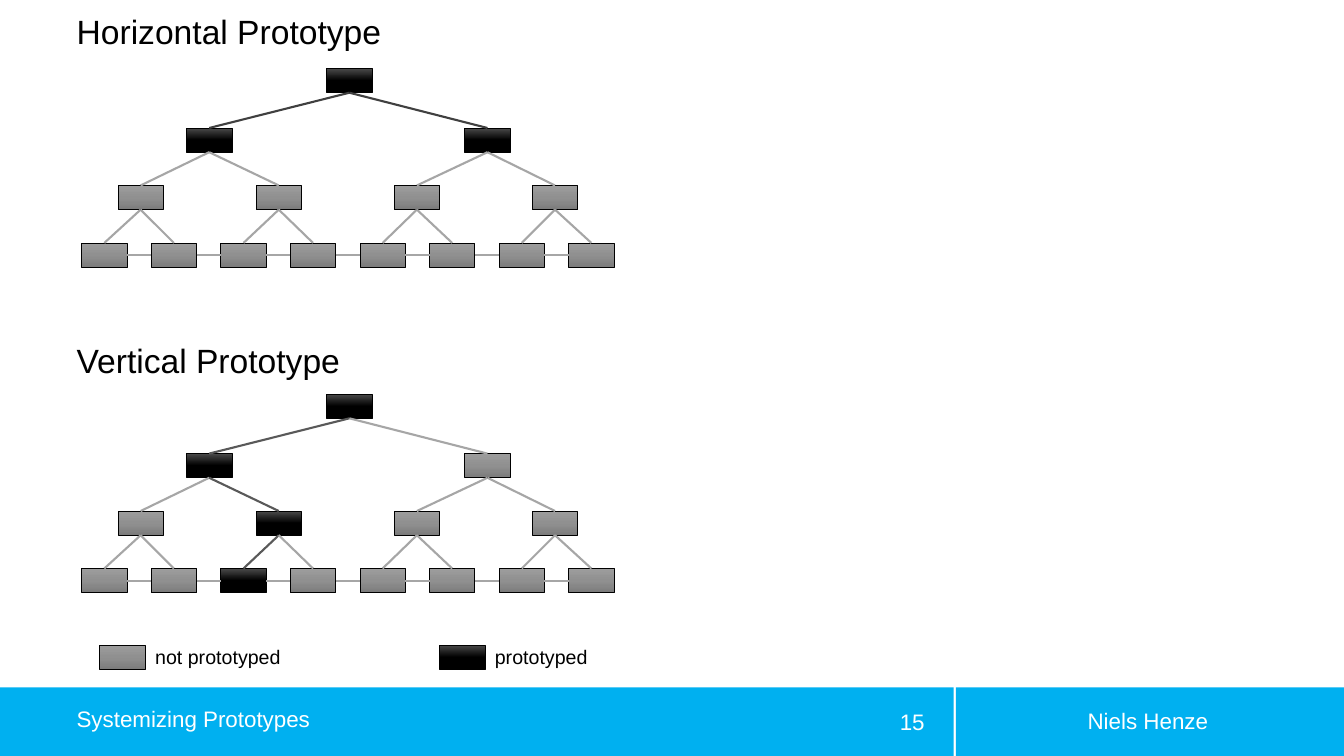
from copy import deepcopy
from dataclasses import dataclass

from pptx import Presentation
from pptx.dml.color import RGBColor
from pptx.enum.shapes import MSO_CONNECTOR, MSO_SHAPE
from pptx.enum.text import MSO_ANCHOR, MSO_AUTO_SIZE, PP_ALIGN
from pptx.oxml.ns import qn
from pptx.oxml.xmlchemy import OxmlElement
from pptx.util import Inches, Pt


@dataclass(frozen=True)
class Theme:
    font: str = "Arial"
    heading: int = 24
    footer: int = 16
    legend: int = 14
    black: str = "000000"
    white: str = "FFFFFF"
    bar: str = "00B0F0"
    link: str = "A6A6A6"
    done: tuple = ("4B4B4B", "000000", "000000")
    todo: tuple = ("9D9D9D", "909090", "7C7C7C")


T = Theme()
rgb = RGBColor.from_string
BOX_W, BOX_H = 0.45, 0.24


def write(sp, text, size, color, align=PP_ALIGN.LEFT, anchor=MSO_ANCHOR.MIDDLE,
          wrap=True, left_inset=0.1):
    tf = sp.text_frame
    tf.text = text
    tf.word_wrap = wrap
    tf.auto_size = MSO_AUTO_SIZE.NONE if wrap else MSO_AUTO_SIZE.SHAPE_TO_FIT_TEXT
    tf.vertical_anchor = anchor
    tf.margin_left = Inches(left_inset)
    p = tf.paragraphs[0]
    p.alignment = align
    font = p.runs[0].font
    font.name, font.size, font.color.rgb = T.font, Pt(size), rgb(color)


def add_box(shapes, x, y, is_done):
    sp = shapes.add_shape(MSO_SHAPE.RECTANGLE, Inches(x), Inches(y),
                          Inches(BOX_W), Inches(BOX_H))
    sp.shadow.inherit = False
    sp.line.color.rgb = rgb(T.black)
    sp.line.width = Pt(0.5)
    # Three-stop gradient running from top to bottom
    sp.fill.gradient()
    sp.fill.gradient_angle = 270
    stops = sp._element.spPr.find(".//" + qn("a:gsLst"))
    stops.insert(1, deepcopy(stops[0]))
    colors = T.done if is_done else T.todo
    for stop, position, color in zip(sp.fill.gradient_stops, (0, 0.5, 1), colors):
        stop.position = position
        stop.color.rgb = rgb(color)
    return sp


prs = Presentation()
prs.slide_width, prs.slide_height = Inches(13.33), Inches(7.5)
s = prs.slides.add_slide(prs.slide_layouts[5])

# Footer bar in two parts
for x, w in ((0, 9.46), (9.48, 3.85)):
    bar = s.shapes.add_shape(MSO_SHAPE.RECTANGLE, Inches(x), Inches(6.82),
                             Inches(w), Inches(0.68))
    bar.shadow.inherit = False
    bar.fill.solid()
    bar.fill.fore_color.rgb = rgb(T.bar)
    bar.line.fill.background()

# Slide title sits in the bar, so it moves in front of it
title = s.shapes.title
bar._element.addnext(title._element)
title.left, title.top = Inches(0.76), Inches(6.95)
title.width, title.height = Inches(6.14), Inches(0.4)
write(title, "Systemizing Prototypes", T.footer, T.white, left_inset=0)
title.text_frame.paragraphs[0].line_spacing = 0.9

# Author and slide number
for text, x, y, w, align in (("Niels Henze", 9.61, 6.95, 3.55, PP_ALIGN.CENTER),
                             ("15", 8.41, 6.96, 0.86, PP_ALIGN.RIGHT)):
    tb = s.shapes.add_textbox(Inches(x), Inches(y), Inches(w), Inches(0.4))
    write(tb, text, T.footer, T.white, align)

# Trees: each level has a first left edge, a step and a drop below the root
LEVELS = ((3.24, 0, 0), (1.85, 2.76, 0.59), (1.17, 1.37, 1.16), (0.81, 0.69, 1.73))
BOTTOM, TOP, LEFT, RIGHT = 2, 0, 1, 3  # connection sites of a rectangle

# Heading, its top and width, root top, prototyped (level, index), active link
TREES = (
    ("Horizontal Prototype", 0.06, 3.25, 0.68,
     {(0, 0), (1, 0), (1, 1)}, "404040"),
    ("Vertical Prototype", 3.32, 2.84, 3.91,
     {(0, 0), (1, 0), (2, 1), (3, 2)}, "595959"),
)
for heading, y, w, root_y, done, active in TREES:
    tb = s.shapes.add_textbox(Inches(0.76), Inches(y), Inches(w), Inches(0.5))
    write(tb, heading, T.heading, T.black, anchor=MSO_ANCHOR.TOP, wrap=False,
          left_inset=0)

    tree = s.shapes.add_group_shape().shapes
    boxes = {}
    for level, (left, step, drop) in enumerate(LEVELS):
        for i in range(2 ** level):
            boxes[level, i] = add_box(tree, left + i * step, root_y + drop,
                                      (level, i) in done)

    # Parent to child, then leaf to next leaf
    links = [((level - 1, i // 2), BOTTOM, (level, i), TOP)
             for level, i in boxes if level]
    links += [((3, i), RIGHT, (3, i + 1), LEFT) for i in range(7)]
    for start, start_site, end, end_site in links:
        link = tree.add_connector(MSO_CONNECTOR.STRAIGHT, 0, 0, 0, 0)
        link.begin_connect(boxes[start], start_site)
        link.end_connect(boxes[end], end_site)
        link.line.color.rgb = rgb(active if {start, end} <= done else T.link)
        link.line.width = Pt(1.5)
        link._element.spPr.append(OxmlElement("a:effectLst"))

# Legend
for text, x, w, is_done in (("not prototyped", 0.99, 1.45, False),
                            ("prototyped", 4.36, 1.13, True)):
    add_box(s.shapes, x, 6.4, is_done)
    tb = s.shapes.add_textbox(Inches(x + BOX_W), Inches(6.35), Inches(w), Inches(0.34))
    write(tb, text, T.legend, T.black, anchor=MSO_ANCHOR.TOP, wrap=False)

prs.save("out.pptx")
